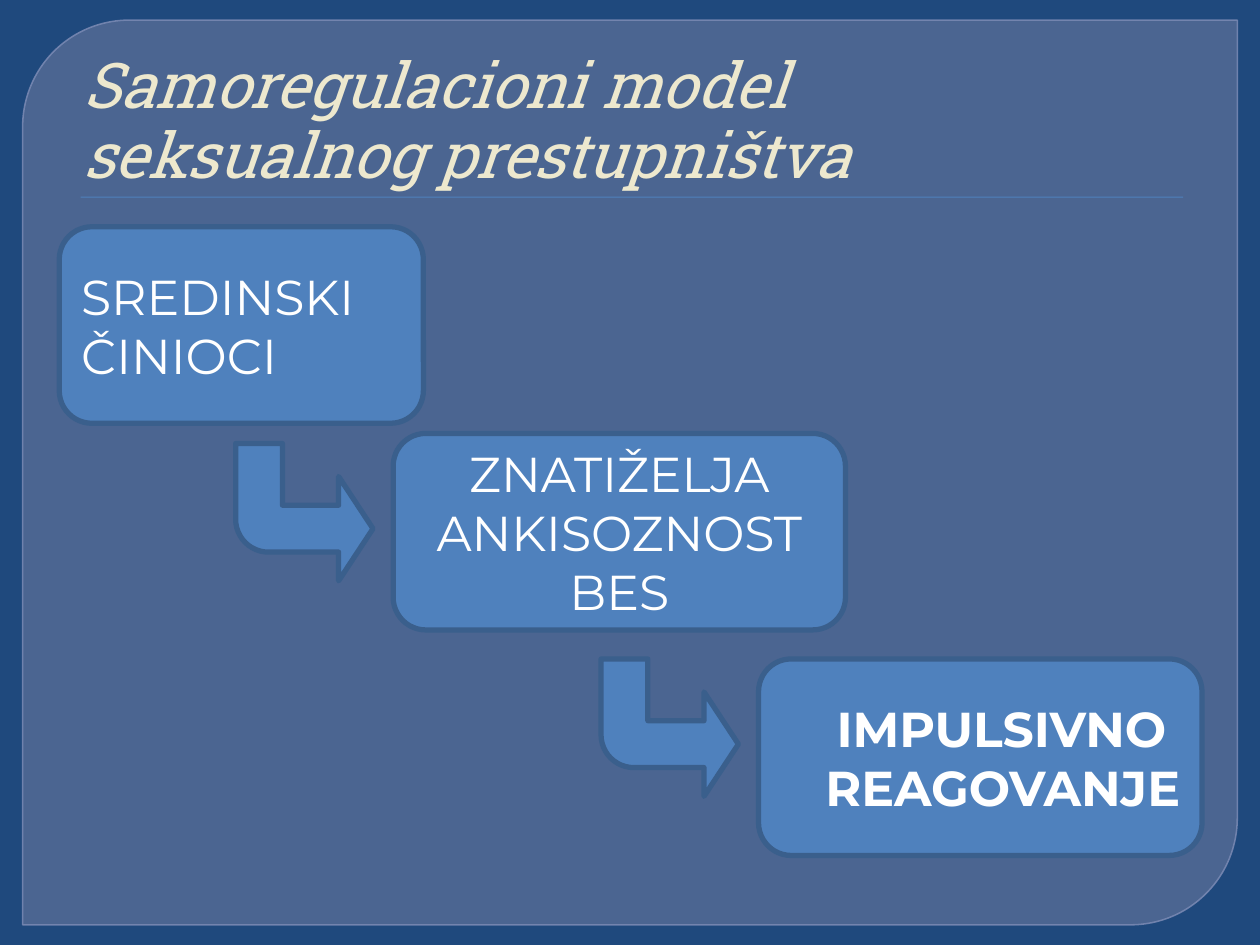
from lxml import etree
from pptx import Presentation
from pptx import util as u
from pptx.dml.color import RGBColor
from pptx.enum import shapes, text
from pptx.oxml.ns import qn

BLUE, EDGE = "4F81BD", "3A5F8C"
SHAPE, ALIGN = shapes.MSO_SHAPE, text.PP_ALIGN


def color(value):
    return RGBColor.from_string(value)


class Builder:
    heading_font, body_font = "Roboto Slab", "Montserrat"

    def __init__(self, deck):
        self.page = deck.slides.add_slide(deck.slide_layouts[5])
        self.page.background.fill.solid()
        self.page.background.fill.fore_color.rgb = color("1F497D")

    def shape(self, kind, place, fill=BLUE, line=EDGE, width=3, adjust=()):
        shape = self.page.shapes.add_shape(kind, *map(u.Inches, place))
        shape.shadow.inherit = False
        shape.fill.solid()
        shape.fill.fore_color.rgb = color(fill)
        if line:
            shape.line.color.rgb = color(line)
            shape.line.width = u.Pt(width)
        else:
            shape.line.fill.background()
        for index, value in enumerate(adjust):
            shape.adjustments[index] = value
        return shape

    def panel(self, place):
        panel = self.shape(SHAPE.ROUND_2_DIAG_RECTANGLE, place, "63759D", "7989B3", 0.87, (0.118, 0))
        fills = panel.element.spPr.iter(qn("a:srgbClr"))
        for tint, percent in zip(fills, (65, 88)):
            etree.SubElement(tint, qn("a:alpha"), val=str(percent * 1000))

    def rule(self, place):
        self.shape(SHAPE.RECTANGLE, place, line=None)

    def title(self, place, words):
        title = self.page.shapes.title
        title.left, title.top, title.width, title.height = map(u.Inches, place)
        title.element.getparent().append(title.element)
        frame = title.text_frame
        frame.text = words
        frame.auto_size = text.MSO_AUTO_SIZE.NONE
        frame.vertical_anchor = text.MSO_ANCHOR.BOTTOM
        frame.margin_bottom = 0
        para = frame.paragraphs[0]
        para.alignment = ALIGN.LEFT
        para.line_spacing = 0.93
        para._p.get_or_add_pPr().set("marL", str(u.Inches(0.06)))
        self.style(para, self.heading_font, 36, "EDE8CE", italic=True)

    def style(self, para, name, size, tone, bold=False, italic=False):
        font = para.font
        font.name, font.size = name, u.Pt(size)
        font.bold, font.italic = bold, italic
        font.color.rgb = color(tone)

    def box(self, place, words, align, bold=False):
        box = self.shape(SHAPE.ROUNDED_RECTANGLE, place)
        frame = box.text_frame
        frame.text = words
        frame.word_wrap = True
        frame.vertical_anchor = text.MSO_ANCHOR.MIDDLE
        for para in frame.paragraphs:
            para.alignment = align
            self.style(para, self.body_font, 28, "FFFFFF", bold)

    def arrow(self, left, top):
        arrow = self.shape(SHAPE.BENT_ARROW, (left, top, 1.09, 1.09),
                           adjust=(0.341, 0.38, 0.25, 0.239))
        arrow.rotation = 180
        arrow.element.spPr.find(qn("a:xfrm")).set("flipH", "1")


def main():
    deck = Presentation()
    deck.slide_width, deck.slide_height = u.Inches(10), u.Inches(7.5)
    slide = Builder(deck)
    slide.panel((0.18, 0.16, 9.64, 7.18))
    slide.rule((0.64, 1.56, 8.75, 0.01))
    slide.title((0.5, 0.28, 9, 1.25), "Samoregulacioni model \vseksualnog prestupništva")
    height = 1.56
    slide.box((0.47, 1.8, 2.89, height), "SREDINSKI ČINIOCI", ALIGN.LEFT)
    slide.box((3.12, 3.44, 3.59, height), "ZNATIŽELJA\nANKISOZNOST\nBES", ALIGN.CENTER)
    slide.box((6.02, 5.23, 3.52, height), "IMPULSIVNO \nREAGOVANJE", ALIGN.RIGHT, bold=True)
    for left, top in ((1.87, 3.52), (4.77, 5.23)):
        slide.arrow(left, top)
    deck.save("out.pptx")


if __name__ == "__main__":
    main()
